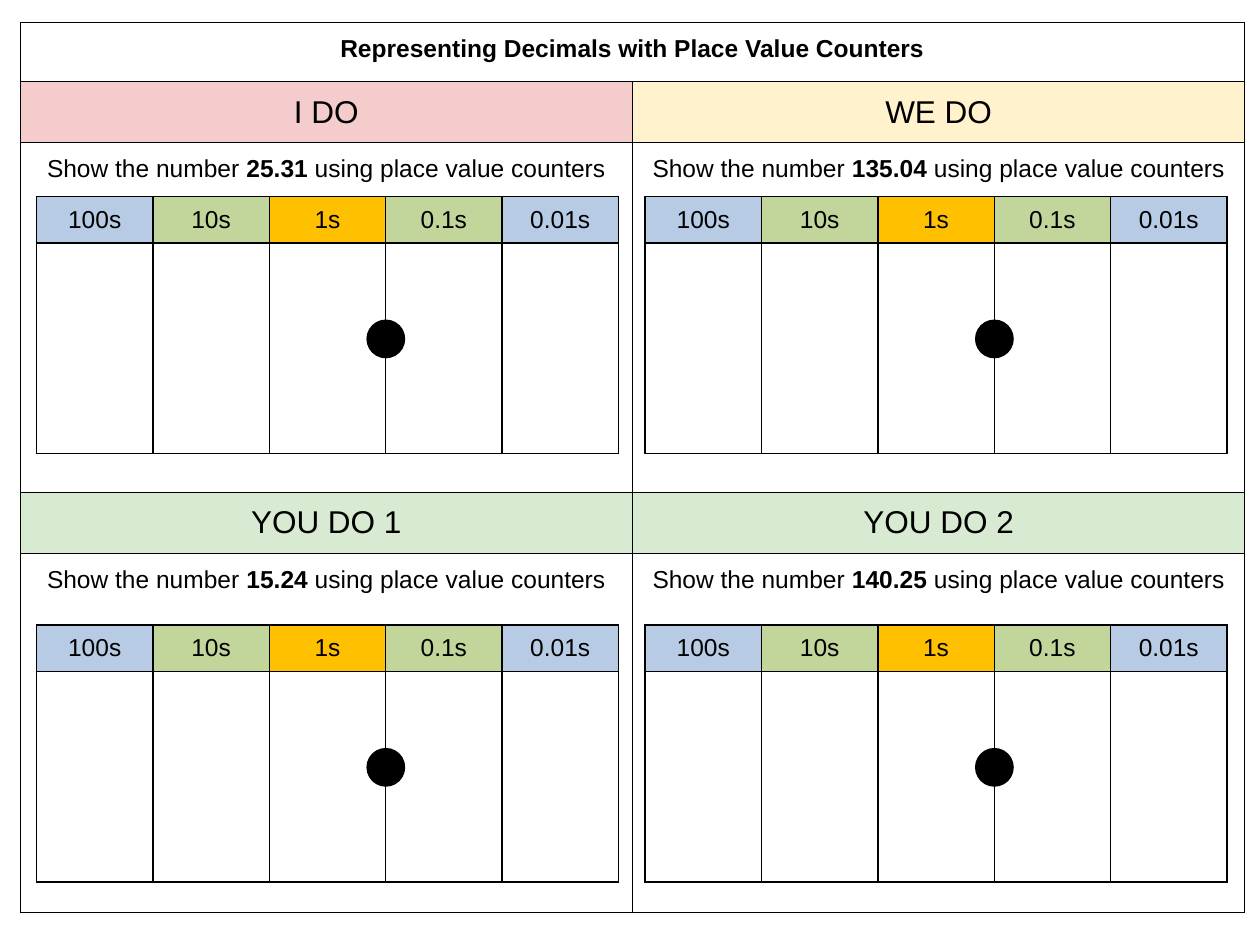
from dataclasses import dataclass
from itertools import product

from lxml.etree import SubElement
from pptx import Presentation
from pptx.dml.color import RGBColor
from pptx.enum.shapes import MSO_SHAPE
from pptx.enum.text import MSO_ANCHOR, PP_ALIGN
from pptx.oxml.ns import qn
from pptx.util import Inches, Pt


@dataclass(frozen=True)
class Theme:
    """Colours, font and type sizes of the slide."""
    font: str = "Arial"
    ink: str = "000000"
    i_do: str = "F4CCCC"
    we_do: str = "FFF2CC"
    you_do: str = "D9EAD3"
    blue: str = "B7CCE4"
    green: str = "C2D59B"
    amber: str = "FFC000"
    body_size: int = 14
    heading_size: int = 18


THEME = Theme()
STAGES = [
    [("I DO", THEME.i_do, "25.31"), ("WE DO", THEME.we_do, "135.04")],
    [("YOU DO 1", THEME.you_do, "15.24"), ("YOU DO 2", THEME.you_do, "140.25")],
]
PLACES = [("100s", THEME.blue), ("10s", THEME.green), ("1s", THEME.amber),
          ("0.1s", THEME.green), ("0.01s", THEME.blue)]
CHART_LEFTS = (0.29, 5.12)
CHART_TOPS = (1.56, 4.96)
CHART_WIDTH = 4.62
DOT_SIZE = 0.28


def add_border(cell, width):
    """Draw a solid line on all four sides of a cell."""
    properties = cell._tc.get_or_add_tcPr()
    for side in ("a:lnL", "a:lnR", "a:lnT", "a:lnB"):
        edge = SubElement(properties, qn(side), w=str(Pt(width)))
        ink = SubElement(edge, qn("a:solidFill"))
        SubElement(ink, qn("a:srgbClr"), val=THEME.ink)


def add_grid(slide, left, top, width, row_heights, column_count, border):
    """Add a plain bordered table and return it."""
    grid = slide.shapes.add_table(
        len(row_heights), column_count, Inches(left), Inches(top),
        Inches(width), Inches(sum(row_heights))).table
    grid.first_row = grid.horz_banding = False
    for row, height in zip(grid.rows, row_heights):
        row.height = Inches(height)
    for cell in grid.iter_cells():
        add_border(cell, border)
        cell.fill.background()
    return grid


def fill_cell(cell, runs, size, inset, color=None, anchor=MSO_ANCHOR.TOP):
    """Write centred (text, bold) runs in a cell and colour it."""
    cell.margin_left = cell.margin_right = Inches(0.1)
    cell.margin_top = cell.margin_bottom = Inches(inset)
    cell.vertical_anchor = anchor
    if color:
        cell.fill.solid()
        cell.fill.fore_color.rgb = RGBColor.from_string(color)
    paragraph = cell.text_frame.paragraphs[0]
    paragraph.alignment = PP_ALIGN.CENTER
    for text, bold in runs:
        run = paragraph.add_run()
        run.text = text
        run.font.name = THEME.font
        run.font.size = Pt(size)
        run.font.bold = bold
        run.font.color.rgb = RGBColor.from_string(THEME.ink)


def add_lesson_frame(slide):
    """Add the title and the four stages with their tasks."""
    frame = add_grid(slide, 0.16, 0.18, 9.72, (0.47, 0.48, 2.78, 0.48, 2.85), 2, 0.75)
    frame.cell(0, 0).merge(frame.cell(0, 1))
    title = [("Representing Decimals with Place Value Counters", True)]
    fill_cell(frame.cell(0, 0), title, THEME.body_size, 0.1)
    for band, stages in enumerate(STAGES):
        for column, (heading, color, number) in enumerate(stages):
            heading_row = 1 + 2 * band
            fill_cell(frame.cell(heading_row, column), [(heading, False)],
                      THEME.heading_size, 0.1, color, MSO_ANCHOR.MIDDLE)
            task = [("Show the number ", False), (number, True),
                    (" using place value counters", False)]
            fill_cell(frame.cell(heading_row + 1, column), task, THEME.body_size, 0.1)


def add_decimal_point(slide, center, top):
    """Add the black dot between ones and tenths."""
    dot = slide.shapes.add_shape(
        MSO_SHAPE.OVAL, Inches(center - DOT_SIZE / 2), Inches(top),
        Inches(DOT_SIZE), Inches(DOT_SIZE))
    dot.shadow.inherit = False
    dot.fill.solid()
    dot.fill.fore_color.rgb = RGBColor.from_string(THEME.ink)
    dot.line.color.rgb = RGBColor.from_string(THEME.ink)
    dot.line.width = Pt(2)


def add_place_value_chart(slide, left, top):
    """Add one place value chart with its decimal point."""
    chart = add_grid(slide, left, top, CHART_WIDTH, (0.37, 1.67), len(PLACES), 1)
    for column, (place, color) in enumerate(PLACES):
        fill_cell(chart.cell(0, column), [(place, False)], THEME.body_size,
                  0.05, color, MSO_ANCHOR.MIDDLE)
    add_decimal_point(slide, left + CHART_WIDTH * 3 / len(PLACES), top + 0.99)


def main():
    """Build and save the slide."""
    deck = Presentation()
    deck.slide_width, deck.slide_height = Inches(10), Inches(7.5)
    slide = deck.slides.add_slide(deck.slide_layouts[6])
    add_lesson_frame(slide)
    for top, left in product(CHART_TOPS, CHART_LEFTS):
        add_place_value_chart(slide, left, top)
    deck.save("out.pptx")


if __name__ == "__main__":
    main()
